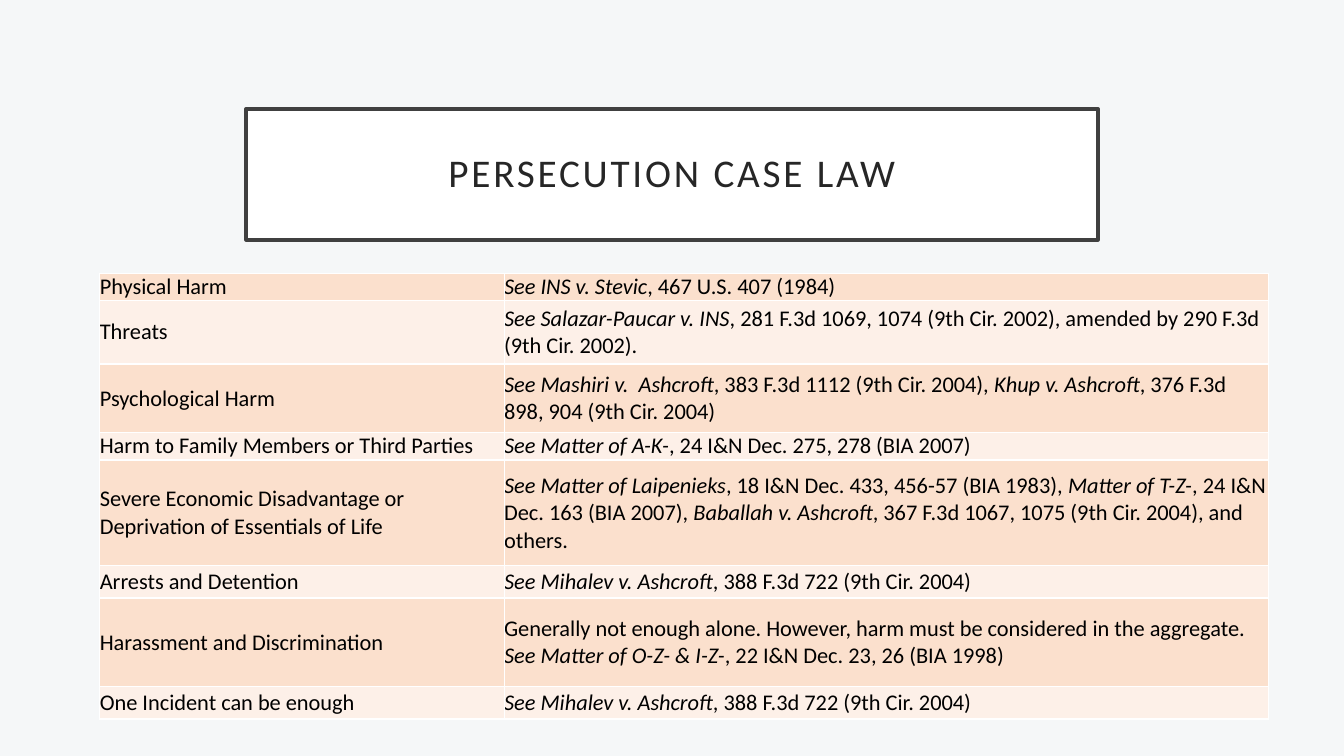
from lxml import etree
from pptx import Presentation
from pptx.dml.color import RGBColor
from pptx.enum.shapes import MSO_SHAPE as SHAPE
from pptx.enum.text import MSO_ANCHOR as ANCHOR, PP_ALIGN as ALIGN
from pptx.oxml import parse_xml
from pptx.oxml.ns import nsdecls, qn
from pptx.util import Inches, Pt

FONT = "Calibri"
BANDS = ["FBE0CD", "FDF0E8"]
COLS = [4.01, 7.58]

# Row height, kind of harm, authority (asterisks enclose italics)
CASES = [
    (0.19, "Physical Harm", "*See INS v. Stevic*, 467 U.S. 407 (1984)"),
    (0.63, "Threats",
     "*See Salazar-Paucar v. INS*, 281 F.3d 1069, 1074 (9th Cir. 2002), "
     "amended by 290 F.3d (9th Cir. 2002)."),
    (0.68, "Psychological Harm",
     "*See Mashiri v.  Ashcroft*, 383 F.3d 1112 (9th Cir. 2004), "
     "*Khup v. Ashcroft*, 376 F.3d 898, 904 (9th Cir. 2004)"),
    (0.25, "Harm to Family Members or Third Parties",
     "*See Matter of A-K-*, 24 I&N Dec. 275, 278 (BIA 2007)"),
    (1.05, "Severe Economic Disadvantage or Deprivation of Essentials of Life",
     "*See Matter of Laipenieks*, 18 I&N Dec. 433, 456-57 (BIA 1983), "
     "*Matter of T-Z-*, 24 I&N Dec. 163 (BIA 2007), "
     "*Baballah v. Ashcroft*, 367 F.3d 1067, 1075 (9th Cir. 2004), and others."),
    (0.32, "Arrests and Detention",
     "*See Mihalev v. Ashcroft*, 388 F.3d 722 (9th Cir. 2004)"),
    (0.88, "Harassment and Discrimination",
     "Generally not enough alone. However, harm must be considered in the "
     "aggregate. *See Matter of O-Z- & I-Z-*, 22 I&N Dec. 23, 26 (BIA 1998)"),
    (0.32, "One Incident can be enough",
     "*See Mihalev v. Ashcroft*, 388 F.3d 722 (9th Cir. 2004)"),
]


def rgb(code):
    return RGBColor.from_string(code)


def write(tf, text, size=16, color="000000", align=ALIGN.LEFT, line=None, spacing=0):
    p = tf.paragraphs[0]
    p.alignment, p.line_spacing = align, line
    for i, part in enumerate(text.split("*")):
        if part:
            r = p.add_run()
            r.text = part
            r.font.name, r.font.size = FONT, Pt(size)
            r.font.italic = i % 2 == 1
            r.font.color.rgb = rgb(color)
            if spacing:
                r.font._element.set("spc", str(spacing * 100))


prs = Presentation()
prs.slide_width, prs.slide_height = Inches(13.33), Inches(7.5)
s = prs.slides.add_slide(prs.slide_layouts[6])
s.background.fill.solid()
s.background.fill.fore_color.rgb = rgb("F5F7F8")

# Framed title
sp = s.shapes.add_shape(SHAPE.RECTANGLE, Inches(2.44), Inches(1.08),
                        Inches(8.45), Inches(1.3))
sp.shadow.inherit = False
sp.fill.solid()
sp.fill.fore_color.rgb = rgb("FFFFFF")
sp.line.color.rgb = rgb("404040")
sp.line.width = Pt(2.5)
tf = sp.text_frame
tf.word_wrap = True
tf.vertical_anchor = ANCHOR.MIDDLE
tf.margin_left = tf.margin_right = tf.margin_top = tf.margin_bottom = Inches(0.2)
write(tf, "PERSECUTION CASE LAW", size=28, color="262626",
      align=ALIGN.CENTER, line=0.9, spacing=2)

# Case table
tbl = s.shapes.add_table(len(CASES), len(COLS), Inches(0.99), Inches(2.71),
                         Inches(sum(COLS)), Inches(sum(c[0] for c in CASES))).table
tbl.first_row = False
for col, width in zip(tbl.columns, COLS):
    col.width = Inches(width)

for i, (height, *texts) in enumerate(CASES):
    tbl.rows[i].height = Inches(height)
    for j, text in enumerate(texts):
        cell = tbl.cell(i, j)
        cell.margin_left = cell.margin_right = cell.margin_top = cell.margin_bottom = 0
        cell.vertical_anchor = ANCHOR.MIDDLE
        write(cell.text_frame, text)
        # White borders come before the fill in the cell properties
        tcPr = cell._tc.get_or_add_tcPr()
        for side in ("lnL", "lnR", "lnT", "lnB"):
            ln = etree.SubElement(tcPr, qn(f"a:{side}"), w=str(Pt(1)))
            ln.append(parse_xml(f'<a:solidFill {nsdecls("a")}>'
                                '<a:srgbClr val="FFFFFF"/></a:solidFill>'))
        cell.fill.solid()
        cell.fill.fore_color.rgb = rgb(BANDS[i % 2])

prs.save("out.pptx")
